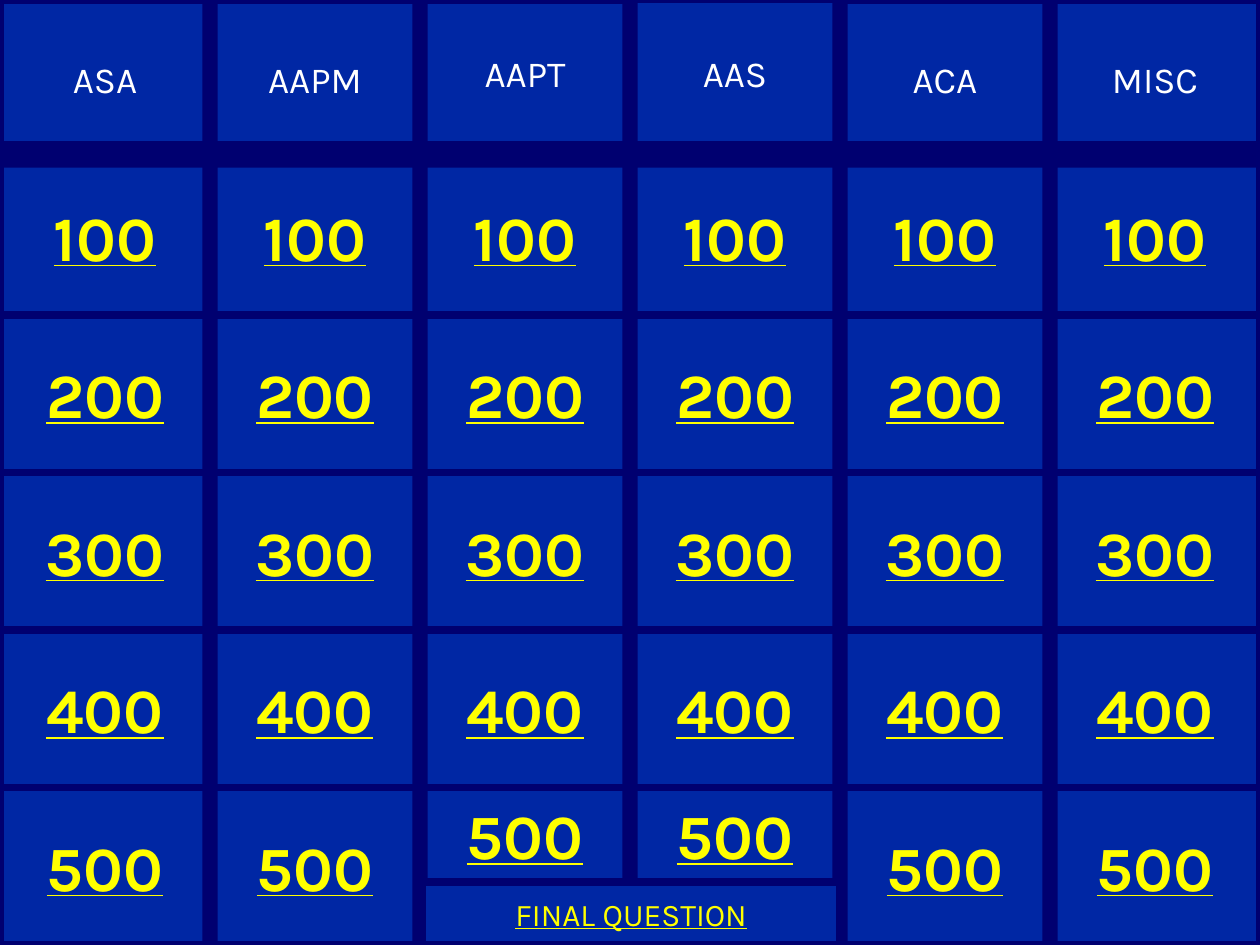
from dataclasses import dataclass

from pptx import Presentation
from pptx.dml.color import RGBColor
from pptx.enum.shapes import MSO_SHAPE
from pptx.enum.text import MSO_ANCHOR, PP_ALIGN
from pptx.shapes.autoshape import Shape
from pptx.slide import Slide
from pptx.util import Pt

NAVY = RGBColor(0x00, 0x00, 0x70)
BLUE = RGBColor(0x00, 0x27, 0xA4)
BACKDROP = RGBColor(0x10, 0x1C, 0x8A)
YELLOW = RGBColor(0xFF, 0xFF, 0x00)
WHITE = RGBColor(0xFF, 0xFF, 0xFF)

FONT = "Karla"
SLIDE_WIDTH, SLIDE_HEIGHT = 720, 540
CELL_WIDTH, CELL_HEIGHT = 120, 90
SHORT_HEIGHT = 54
DIVIDER_WIDTH = 8.64
BORDER_WIDTH = 4.5
VALUES = (100, 200, 300, 400, 500)


@dataclass(frozen=True)
class Category:
    name: str
    top: float = 0
    height: float = CELL_HEIGHT
    last_height: float = CELL_HEIGHT


CATEGORIES = (
    Category("ASA"),
    Category("AAPM"),
    Category("AAPT", height=82.8, last_height=SHORT_HEIGHT),
    Category("AAS", top=-0.72, height=84.24, last_height=SHORT_HEIGHT),
    Category("ACA"),
    Category("MISC"),
)


def write_text(box: Shape, text: str, *, size: float, color: RGBColor,
               bold: bool = False, underline: bool = False) -> None:
    frame = box.text_frame
    frame.word_wrap = False
    frame.vertical_anchor = MSO_ANCHOR.MIDDLE
    para = frame.paragraphs[0]
    para.alignment = PP_ALIGN.CENTER
    span = para.add_run()
    span.text = text
    span.font.name = FONT
    span.font.size = Pt(size)
    span.font.color.rgb = color
    span.font.bold = bold
    span.font.underline = underline


def add_panel(page: Slide, left: float, top: float, width: float, height: float,
              *, fill: RGBColor = BLUE, border: bool = True,
              kind: MSO_SHAPE = MSO_SHAPE.RECTANGLE) -> Shape:
    panel = page.shapes.add_shape(kind, Pt(left), Pt(top), Pt(width), Pt(height))
    panel.shadow.inherit = False
    panel.fill.solid()
    panel.fill.fore_color.rgb = fill
    if border:
        panel.line.color.rgb = NAVY
        panel.line.width = Pt(BORDER_WIDTH)
    else:
        panel.line.fill.background()
    return panel


def add_category(page: Slide, category: Category, left: float) -> None:
    """Draw one column: the heading and its five value buttons."""
    heading = add_panel(page, left, category.top, CELL_WIDTH, category.height)
    write_text(heading, category.name, size=21, color=WHITE)
    for row, value in enumerate(VALUES, start=1):
        height = category.last_height if value == VALUES[-1] else CELL_HEIGHT
        button = add_panel(page, left, row * CELL_HEIGHT, CELL_WIDTH, height,
                           kind=MSO_SHAPE.ACTION_BUTTON_CUSTOM)
        write_text(button, str(value), size=36, color=YELLOW, bold=True, underline=True)


def add_dividers(page: Slide) -> None:
    for column in range(1, len(CATEGORIES)):
        left = column * CELL_WIDTH - DIVIDER_WIDTH / 2
        add_panel(page, left, 0, DIVIDER_WIDTH, SLIDE_HEIGHT, fill=NAVY, border=False)
    add_panel(page, 0, 80.64, SLIDE_WIDTH, 15.12, fill=NAVY, border=False)


def add_final_round(page: Slide) -> None:
    add_panel(page, 241.2, 504, 239.04, 36)
    label = page.shapes.add_textbox(Pt(245.52), Pt(515.52), Pt(230.4), Pt(13.68))
    write_text(label, "FINAL QUESTION", size=18, color=YELLOW, underline=True)


def main() -> None:
    deck = Presentation()
    deck.slide_width, deck.slide_height = Pt(SLIDE_WIDTH), Pt(SLIDE_HEIGHT)
    page = deck.slides.add_slide(deck.slide_layouts[6])
    page.background.fill.solid()
    page.background.fill.fore_color.rgb = BACKDROP
    for column, category in enumerate(CATEGORIES):
        add_category(page, category, column * CELL_WIDTH)
    add_dividers(page)
    add_final_round(page)
    deck.save("out.pptx")


if __name__ == "__main__":
    main()
